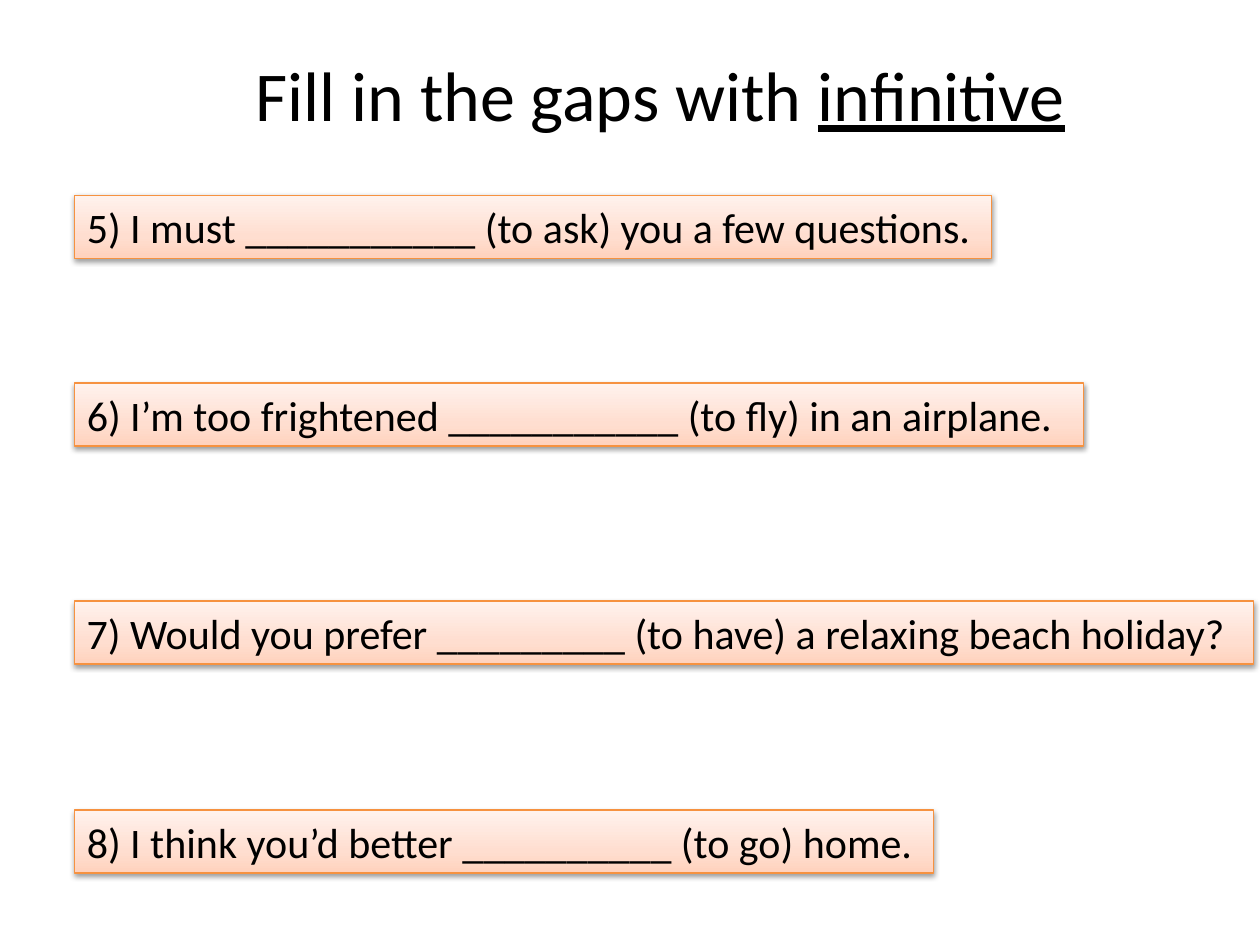
from copy import deepcopy
from dataclasses import dataclass

from lxml import etree
from pptx import Presentation
from pptx.dml.color import RGBColor
from pptx.enum.shapes import MSO_SHAPE as Shape
from pptx.enum.text import MSO_ANCHOR as Anchor, MSO_AUTO_SIZE as AutoSize, PP_ALIGN as Align
from pptx.oxml.ns import qn
from pptx.util import Inches, Pt


@dataclass(frozen=True)
class Theme:
    font: str = "Calibri"
    title_size: int = 40
    sentence_size: int = 24
    ink: str = "000000"
    border: str = "F69240"
    gradient: tuple = ((0, "FFD2BD"), (0.35, "FFDED0"), (1, "FFF2ED"))


theme = Theme()


def add_text(paragraph, text, size, underline=None):
    run = paragraph.add_run()
    run.text = text
    run.font.name = theme.font
    run.font.size = Pt(size)
    run.font.underline = underline
    run.font.color.rgb = RGBColor.from_string(theme.ink)


def style_card(card):
    # Three-stop gradient, light at the top
    card.fill.gradient()
    card.fill.gradient_angle = 90
    stop_list = card._element.spPr.find(qn("a:gradFill")).find(qn("a:gsLst"))
    stop_list.insert(1, deepcopy(stop_list[0]))
    for stop, (position, color) in zip(card.fill.gradient_stops, theme.gradient):
        stop.position = position
        stop.color.rgb = RGBColor.from_string(color)
    card.line.color.rgb = RGBColor.from_string(theme.border)
    card.line.width = Pt(0.75)
    # Soft shadow straight below
    card.shadow.inherit = False
    effects = card._element.spPr.find(qn("a:effectLst"))
    shadow = etree.SubElement(effects, qn("a:outerShdw"), blurRad=str(Pt(3.1)),
                              dist=str(Pt(1.6)), dir="5400000", rotWithShape="0")
    shade = etree.SubElement(shadow, qn("a:srgbClr"), val=theme.ink)
    etree.SubElement(shade, qn("a:alpha"), val="38000")


prs = Presentation()
prs.slide_width, prs.slide_height = Inches(10), Inches(7.5)
slide = prs.slides.add_slide(prs.slide_layouts[5])

# Title
title = slide.shapes.title
title.left, title.top = Inches(1.93), Inches(0.36)
title.width, title.height = Inches(6.69), Inches(0.77)
heading = title.text_frame
heading.word_wrap = False
heading.auto_size = AutoSize.SHAPE_TO_FIT_TEXT
heading.vertical_anchor = Anchor.TOP
heading_line = heading.paragraphs[0]
heading_line.alignment = Align.LEFT
add_text(heading_line, "Fill in the gaps with ", theme.title_size)
add_text(heading_line, "infinitive", theme.title_size, underline=True)

# Sentences to complete: top, width, text
sentences = [
    (1.55, 7.28, "5) I must ___________ (to ask) you a few questions."),
    (3.04, 8.01, "6) I’m too frightened ___________ (to fly) in an airplane."),
    (4.77, 9.36, "7) Would you prefer _________ (to have) a relaxing beach holiday?"),
    (6.43, 6.82, "8) I think you’d better __________ (to go) home."),
]
for top, width, sentence in sentences:
    card = slide.shapes.add_shape(Shape.RECTANGLE, Inches(0.59), Inches(top),
                                  Inches(width), Inches(0.5))
    style_card(card)
    frame = card.text_frame
    frame.word_wrap = False
    frame.auto_size = AutoSize.SHAPE_TO_FIT_TEXT
    frame.vertical_anchor = Anchor.TOP
    frame.paragraphs[0].alignment = Align.LEFT
    add_text(frame.paragraphs[0], sentence, theme.sentence_size)

prs.save("out.pptx")
